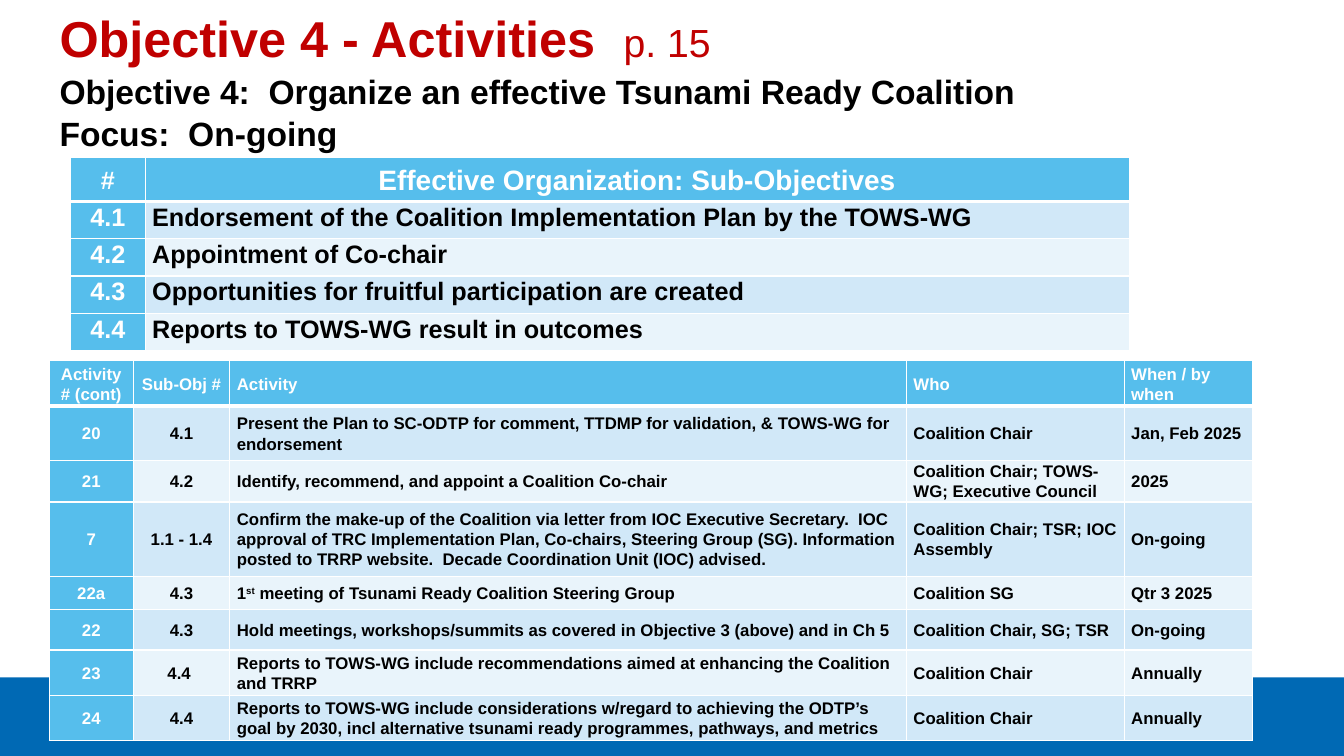
from lxml import etree
from pptx import Presentation
from pptx.dml.color import RGBColor
from pptx.enum.shapes import MSO_SHAPE
from pptx.enum.text import MSO_ANCHOR, MSO_AUTO_SIZE, PP_ALIGN
from pptx.oxml.ns import qn
from pptx.util import Inches, Pt

LEFT, CENTER = PP_ALIGN.LEFT, PP_ALIGN.CENTER
TOP, MIDDLE = MSO_ANCHOR.TOP, MSO_ANCHOR.MIDDLE
RECTANGLE = MSO_SHAPE.RECTANGLE
NO_AUTOFIT = MSO_AUTO_SIZE.NONE

BLACK = RGBColor(0x00, 0x00, 0x00)
WHITE = RGBColor(0xFF, 0xFF, 0xFF)
RED = RGBColor(0xC0, 0x00, 0x00)
DEEP_BLUE = RGBColor(0x00, 0x69, 0xB4)
SKY_BLUE = RGBColor(0x56, 0xBE, 0xEC)
BANDS = [RGBColor(0xD1, 0xE8, 0xF8), RGBColor(0xE9, 0xF4, 0xFB)]

FONT_NAME = "Arial"
SLIDE_WIDTH, SLIDE_HEIGHT = 13.33, 7.5
MARGIN = 0.49

TITLE = [("Objective 4 - Activities  ", 36, True), ("p. 15", 28, False)]
SUBTITLE = [
    "Objective 4:  Organize an effective Tsunami Ready Coalition",
    "Focus:  On-going",
]
BARS = [  # left, top, width, height
    (0.57, 1.17, 2.65, 0.11),
    (0, 6.72, SLIDE_WIDTH, 0.78),
]

SUB_OBJECTIVES = {
    "position": (0.7, 1.56),
    "columns": [0.74, 9.76],
    "rows": [0.44] + [0.37] * 4,
    "centered_columns": 1,
    "header_alignments": [CENTER, CENTER],
    "header_sizes": [18, 20],
    "size": 18,
    "anchor": TOP,
    "content": [
        ("#", "Effective Organization: Sub-Objectives"),
        ("4.1", "Endorsement of the Coalition Implementation Plan by the TOWS-WG"),
        ("4.2", "Appointment of Co-chair"),
        ("4.3", "Opportunities for fruitful participation are created"),
        ("4.4", "Reports to TOWS-WG result in outcomes"),
    ],
}

# A tuple in place of a text holds its pieces; every second piece is superscript.
ACTIVITIES = {
    "position": (MARGIN, 3.58),
    "columns": [0.83, 0.96, 6.71, 2.16, 1.27],
    "rows": [0.45, 0.54, 0.41, 0.74, 0.33, 0.4, 0.45, 0.45],
    "centered_columns": 2,
    "header_alignments": [CENTER, CENTER, LEFT, LEFT, LEFT],
    "header_sizes": [12] * 5,
    "size": 12,
    "anchor": MIDDLE,
    "content": [
        ("Activity # (cont)", "Sub-Obj #", "Activity", "Who", "When / by when"),
        ("20", "4.1",
         "Present the Plan to SC-ODTP for comment, TTDMP for validation, "
         "& TOWS-WG for endorsement",
         "Coalition Chair", "Jan, Feb 2025"),
        ("21", "4.2", "Identify, recommend, and appoint a Coalition Co-chair",
         "Coalition Chair; TOWS-WG; Executive Council", "2025"),
        ("7", "1.1 - 1.4",
         "Confirm the make-up of the Coalition via letter from IOC Executive "
         "Secretary.  IOC approval of TRC Implementation Plan, Co-chairs, Steering "
         "Group (SG). Information posted to TRRP website.  Decade Coordination "
         "Unit (IOC) advised.",
         "Coalition Chair; TSR; IOC Assembly", "On-going"),
        ("22a", "4.3",
         ("1", "st", " meeting of Tsunami Ready Coalition Steering Group"),
         "Coalition SG", "Qtr 3 2025"),
        ("22", "4.3",
         "Hold meetings, workshops/summits as covered in Objective 3 (above) "
         "and in Ch 5",
         "Coalition Chair, SG; TSR", "On-going"),
        ("23", "4.4 ",
         "Reports to TOWS-WG include recommendations aimed at enhancing the "
         "Coalition and TRRP",
         "Coalition Chair", "Annually"),
        ("24", "4.4",
         "Reports to TOWS-WG include considerations w/regard to achieving the "
         "ODTP’s goal by 2030, incl alternative tsunami ready programmes, "
         "pathways, and metrics",
         "Coalition Chair", "Annually"),
    ],
}


def set_attributes(target, **values):
    for name, value in values.items():
        setattr(target, name, value)


def add_run(paragraph, text, size, color, bold=True):
    run = paragraph.add_run()
    run.text = text
    set_attributes(run.font, name=FONT_NAME, size=Pt(size), bold=bold)
    run.font.color.rgb = color
    return run


def place(shape, left, top, width, height):
    set_attributes(shape, left=Inches(left), top=Inches(top),
                   width=Inches(width), height=Inches(height))


def add_bar(slide, position):
    """Add a blue bar behind everything else."""
    bar = slide.shapes.add_shape(RECTANGLE, *map(Inches, position))
    bar.shadow.inherit = False
    bar.fill.solid()
    bar.fill.fore_color.rgb = DEEP_BLUE
    bar.line.fill.background()
    slide.shapes._spTree.insert(2, bar._element)


def fill_title(title):
    place(title, MARGIN, -0.14, 11.5, 1.1)
    set_attributes(title.text_frame, vertical_anchor=MIDDLE, word_wrap=True,
                   auto_size=NO_AUTOFIT)
    paragraph = title.text_frame.paragraphs[0]
    set_attributes(paragraph, alignment=LEFT, line_spacing=0.9)
    for text, size, bold in TITLE:
        add_run(paragraph, text, size, RED, bold)


def fill_subtitle(body):
    place(body, MARGIN, 0.7, 9.8, 0.58)
    body.fill.solid()
    body.fill.fore_color.rgb = WHITE
    frame = body.text_frame
    set_attributes(frame, vertical_anchor=TOP, word_wrap=True, auto_size=NO_AUTOFIT)
    for index, text in enumerate(SUBTITLE):
        paragraph = frame.add_paragraph() if index else frame.paragraphs[0]
        properties = paragraph._p.get_or_add_pPr()
        properties.set("marL", "0")
        properties.set("indent", "0")
        etree.SubElement(properties, qn("a:buNone"))
        set_attributes(paragraph, alignment=LEFT, line_spacing=0.9,
                       space_before=Pt(3.8 if index else 0))
        add_run(paragraph, text, 24, BLACK)


def add_borders(cell, row):
    """Draw white cell borders, with a thick rule under the header row."""
    widths = {"L": 1, "R": 1, "T": 3 if row == 1 else 1, "B": 3 if row == 0 else 1}
    properties = cell._tc.get_or_add_tcPr()
    for side, width in widths.items():
        line = etree.SubElement(properties, qn(f"a:ln{side}"), w=str(Pt(width)))
        fill = etree.SubElement(line, qn("a:solidFill"))
        etree.SubElement(fill, qn("a:srgbClr"), val=str(WHITE))


def fill_cell(cell, content, row, column, layout):
    is_header = row == 0
    is_blue = is_header or column == 0
    add_borders(cell, row)
    cell.fill.solid()
    cell.fill.fore_color.rgb = SKY_BLUE if is_blue else BANDS[(row - 1) % 2]
    set_attributes(cell, margin_left=Inches(0.07), margin_right=Inches(0.07),
                   margin_top=0, margin_bottom=0,
                   vertical_anchor=MIDDLE if is_header else layout["anchor"])
    paragraph = cell.text_frame.paragraphs[0]
    body_alignment = CENTER if column < layout["centered_columns"] else LEFT
    alignment = layout["header_alignments"][column] if is_header else body_alignment
    set_attributes(paragraph, alignment=alignment, line_spacing=1.07)
    size = layout["header_sizes"][column] if is_header else layout["size"]
    pieces = (content,) if isinstance(content, str) else content
    for index, text in enumerate(pieces):
        run = add_run(paragraph, text, size, WHITE if is_blue else BLACK)
        if index % 2:
            run.font._element.set("baseline", "30000")


def add_grid(slide, layout):
    columns, rows = layout["columns"], layout["rows"]
    lengths = (*layout["position"], sum(columns), sum(rows))
    table = slide.shapes.add_table(len(rows), len(columns), *map(Inches, lengths)).table
    for column, width in zip(table.columns, columns):
        column.width = Inches(width)
    for row, height in zip(table.rows, rows):
        row.height = Inches(height)
    for row, texts in enumerate(layout["content"]):
        for column, content in enumerate(texts):
            fill_cell(table.cell(row, column), content, row, column, layout)


def main():
    presentation = Presentation()
    set_attributes(presentation, slide_width=Inches(SLIDE_WIDTH),
                   slide_height=Inches(SLIDE_HEIGHT))
    slide = presentation.slides.add_slide(presentation.slide_layouts[1])
    for position in BARS:
        add_bar(slide, position)
    fill_title(slide.shapes.title)
    fill_subtitle(slide.placeholders[1])
    for layout in (SUB_OBJECTIVES, ACTIVITIES):
        add_grid(slide, layout)
    presentation.save("out.pptx")


if __name__ == "__main__":
    main()
